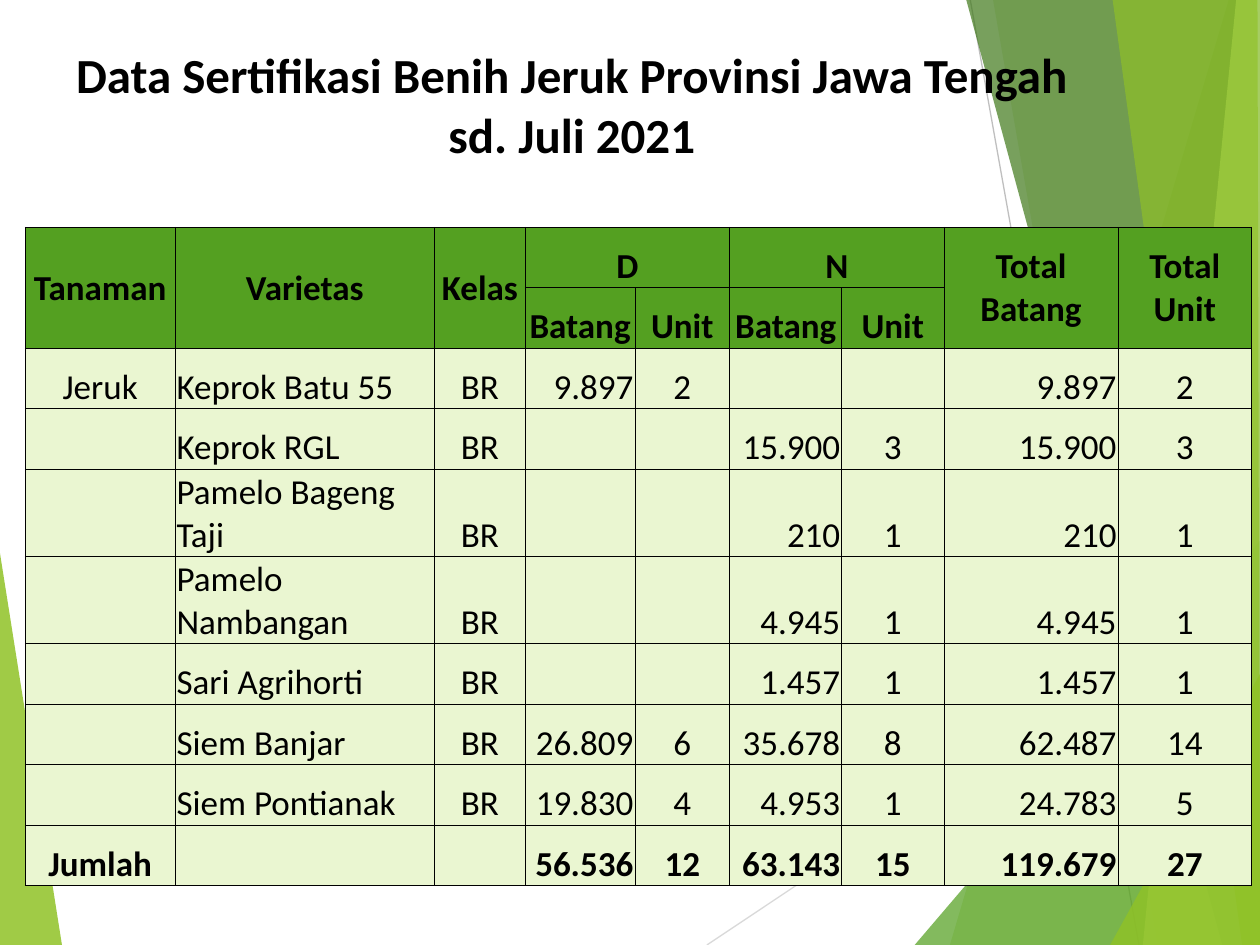
from pptx import Presentation
from pptx.dml.color import RGBColor as Rgb
from pptx.enum.shapes import MSO_CONNECTOR as Link
from pptx.enum.text import MSO_ANCHOR as Anchor, PP_ALIGN as Align
from pptx.oxml.ns import qn
from pptx.util import Cm, Pt
from lxml.etree import SubElement as Sub, Element

BLACK = Rgb(0x00, 0x00, 0x00)
LIME = Rgb(0x90, 0xC2, 0x26)
GREEN = Rgb(0x54, 0xA0, 0x21)
DARK = Rgb(0x3F, 0x78, 0x19)
PALE = Rgb(0xC0, 0xE4, 0x74)
MINT = Rgb(0xEA, 0xF6, 0xD1)
GREY = Rgb(0xBF, 0xBF, 0xBF)
LIGHT = Rgb(0xD9, 0xD9, 0xD9)

WIDE, HIGH = 25.4, 19.05

# Facets behind the table: colour, opacity in percent, corners in cm
LEFT = (LIME, 85, [(0, 11.15), (1.25, HIGH), (0, HIGH)])
RIGHT = [
    (LIME, 30, [(24.77, 0), (19.15, HIGH), (WIDE, HIGH), (WIDE, 0)]),
    (LIME, 20, [(20.02, 0), (23.34, HIGH), (WIDE, HIGH), (WIDE, 0)]),
    (GREEN, 72, [(18.44, HIGH), (WIDE, 10.9), (WIDE, HIGH)]),
    (DARK, 70, [(19.48, 0), (24.64, HIGH), (WIDE, HIGH), (WIDE, 0)]),
    (PALE, 70, [(24.92, 0), (23.04, HIGH), (WIDE, HIGH), (WIDE, 0)]),
    (LIME, 65, [(22.43, 0), (25.04, HIGH), (WIDE, HIGH), (25.35, 0)]),
    (LIME, 80, [(22.38, HIGH), (WIDE, 13.59), (WIDE, HIGH)]),
]

TITLE = "Data Sertifikasi Benih Jeruk Provinsi Jawa Tengah\nsd. Juli 2021"
COLS = [3.02, 5.23, 1.83, 2.21, 1.91, 2.26, 2.06, 3.51, 2.69]
ROWS = [2.62] + [1.22] * 11
HEAD = [
    ["Tanaman", "Varietas", "Kelas", "D", "", "N", "", "Total Batang", "Total Unit"],
    ["", "", "", "Batang", "Unit", "Batang", "Unit", "", ""],
]
BODY = [
    ["Jeruk", "Keprok Batu 55", "BR", "9.897", "2", "", "", "9.897", "2"],
    ["", "Keprok RGL", "BR", "", "", "15.900", "3", "15.900", "3"],
    ["", "Pamelo Bageng Taji", "BR", "", "", "210", "1", "210", "1"],
    ["", "Pamelo Nambangan", "BR", "", "", "4.945", "1", "4.945", "1"],
    ["", "Sari Agrihorti", "BR", "", "", "1.457", "1", "1.457", "1"],
    ["", "Siem Banjar", "BR", "26.809", "6", "35.678", "8", "62.487", "14"],
    ["", "Siem Pontianak", "BR", "19.830", "4", "4.953", "1", "24.783", "5"],
    ["Jumlah", "", "", "56.536", "12", "63.143", "15", "119.679", "27"],
]
# Merged cells: first row and column, last row and column
SPANS = [(0, 0, 0, 7), (1, 0, 1, 1), (2, 3, 2, 4), (2, 5, 2, 6)]
SPANS += [(2, col, 3, col) for col in (0, 1, 2, 7, 8)]
ALIGNS = {1: Align.LEFT, 3: Align.RIGHT, 5: Align.RIGHT, 7: Align.RIGHT}


class Deck:
    font = "Calibri"
    size = 20

    def __init__(self):
        self.show = Presentation()
        self.show.slide_width, self.show.slide_height = Cm(WIDE), Cm(HIGH)
        self.slide = self.show.slides.add_slide(self.show.slide_layouts[6])

    def facet(self, color, alpha, spots):
        first, *rest = [(Cm(x), Cm(y)) for x, y in spots]
        pen = self.slide.shapes.build_freeform(*first)
        pen.add_line_segments(rest, close=True)
        shape = pen.convert_to_shape()
        shape.shadow.inherit = False
        shape.line.fill.background()
        shape.fill.solid()
        shape.fill.fore_color.rgb = color
        tint = shape.fill._xPr.find(".//" + qn("a:srgbClr"))
        Sub(tint, qn("a:alpha"), val=str(alpha * 1000))

    def line(self, start, end, color):
        ends = [Cm(n) for n in start + end]
        rule = self.slide.shapes.add_connector(Link.STRAIGHT, *ends)
        rule.line.color.rgb = color
        rule.line.width = Pt(0.75)
        Sub(rule._element.spPr, qn("a:effectLst"))

    def table(self, left, top, cols, rows):
        frame = self.slide.shapes.add_table(
            len(rows), len(cols), Cm(left), Cm(top), Cm(sum(cols)), Cm(sum(rows)))
        grid = frame.table
        for col, width in zip(grid.columns, cols):
            col.width = Cm(width)
        for row, height in zip(grid.rows, rows):
            row.height = Cm(height)
        grid.first_row = grid.horz_banding = False
        return grid

    def edge(self, cell, sides):
        props = cell._tc.get_or_add_tcPr()
        for spot, side in enumerate("LRTB"):
            rule = Element(qn("a:ln" + side), w=str(Pt(0.5)))
            if side in sides:
                fill = Sub(rule, qn("a:solidFill"))
                Sub(fill, qn("a:srgbClr"), val=str(BLACK))
            else:
                Sub(rule, qn("a:noFill"))
            props.insert(spot, rule)

    def cell(self, cell, fill=None, sides=""):
        if fill is None:
            cell.fill.background()
        else:
            cell.fill.solid()
            cell.fill.fore_color.rgb = fill
        self.edge(cell, sides)

    def text(self, cell, words, align=Align.CENTER, anchor=Anchor.BOTTOM,
             bold=True, size=None):
        cell.margin_left = cell.margin_right = cell.margin_top = Cm(0.03)
        cell.margin_bottom = 0
        cell.vertical_anchor = anchor
        cell.text_frame.text = words
        for para in cell.text_frame.paragraphs:
            para.alignment = align
            for run in para.runs:
                font = run.font
                font.name, font.size = self.font, Pt(size or self.size)
                font.bold, font.color.rgb = bold, BLACK


def main():
    deck = Deck()

    # Backdrop
    deck.facet(*LEFT)
    deck.line((14.25, HIGH), (WIDE, 11.61), LIGHT)
    deck.line((19.56, 0), (22.96, HIGH), GREY)
    for facet in RIGHT:
        deck.facet(*facet)

    # Table frame, with the title in its top row
    grid = deck.table(0.51, 0.74, COLS, ROWS)
    for col in range(len(COLS)):
        deck.cell(grid.cell(0, col))
        deck.cell(grid.cell(1, col), sides="B")
    deck.text(grid.cell(0, 0), TITLE, size=28)

    # Head and body rows
    for row, words in enumerate(HEAD + BODY, 2):
        head, total = row < 4, row == len(ROWS) - 1
        for col, word in enumerate(words):
            cell = grid.cell(row, col)
            deck.cell(cell, GREEN if head else MINT, "LRTB")
            if word:
                tall = (row, col, row + 1, col) in SPANS
                deck.text(cell, word,
                          Align.CENTER if head else ALIGNS.get(col, Align.CENTER),
                          Anchor.MIDDLE if tall else Anchor.BOTTOM,
                          head or total)

    # Merges
    for top, left, low, right in SPANS:
        grid.cell(top, left).merge(grid.cell(low, right))

    deck.show.save("out.pptx")


if __name__ == "__main__":
    main()
